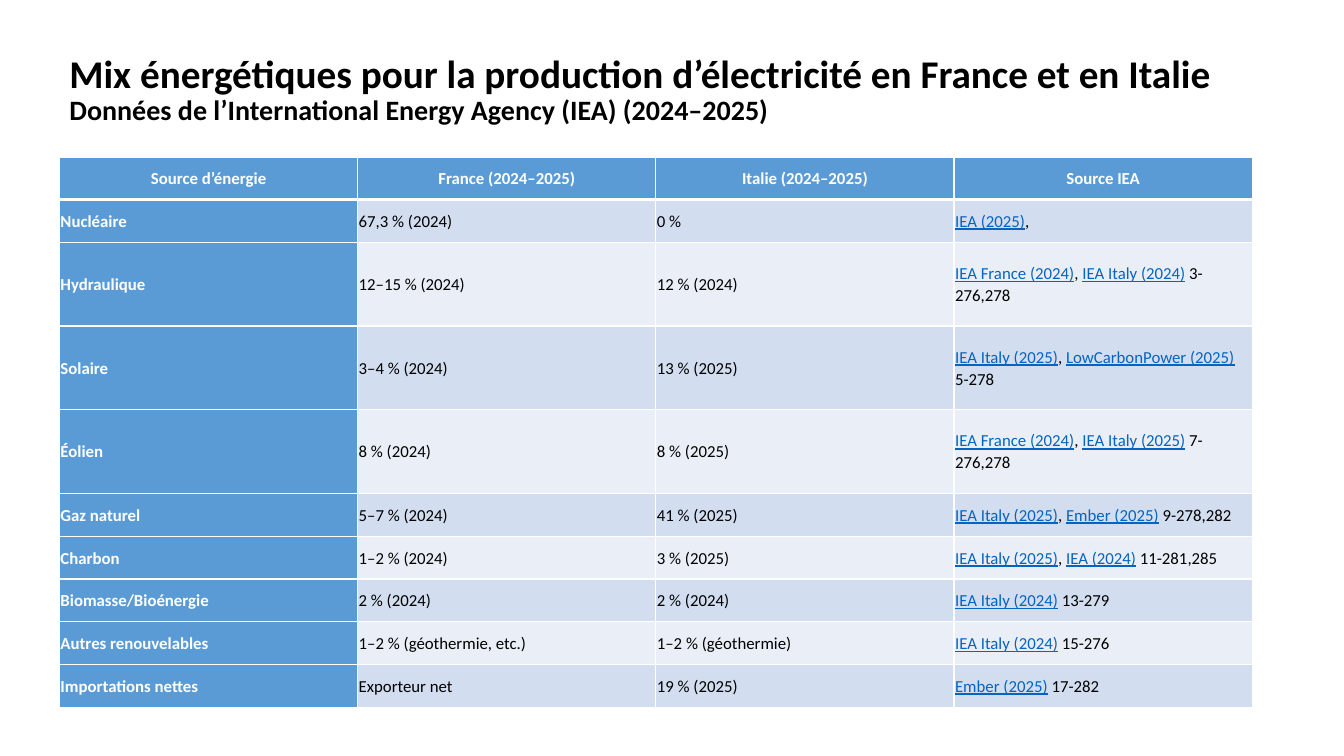
import pptx
import pptx.dml.color
import pptx.enum.text
import pptx.oxml
import pptx.oxml.ns
import pptx.util
from pptx.util import Inches

FONT = "Calibri"
COLOURS = {
    "text": "000000",
    "white": "FFFFFF",
    "link": "0563C1",
    "header": "5B9BD5",
    "dark_band": "D2DEEF",
    "light_band": "EAEFF7",
}
HEADINGS = ["Source d’énergie", "France (2024–2025)", "Italie (2024–2025)", "Source IEA"]
# In the last column, links and plain text alternate, starting with a link.
ENERGY_ROWS = [
    ("Nucléaire", "67,3 % (2024)", "0 %", ["IEA (2025)", ","]),
    ("Hydraulique", "12–15 % (2024)", "12 % (2024)",
     ["IEA France (2024)", ", ", "IEA Italy (2024)", " 3-276,278"]),
    ("Solaire", "3–4 % (2024)", "13 % (2025)",
     ["IEA Italy (2025)", ", ", "LowCarbonPower (2025)", " 5-278"]),
    ("Éolien", "8 % (2024)", "8 % (2025)",
     ["IEA France (2024)", ", ", "IEA Italy (2025)", " 7-276,278"]),
    ("Gaz naturel", "5–7 % (2024)", "41 % (2025)",
     ["IEA Italy (2025)", ", ", "Ember (2025)", " 9-278,282"]),
    ("Charbon", "1–2 % (2024)", "3 % (2025)",
     ["IEA Italy (2025)", ", ", "IEA (2024)", " 11-281,285"]),
    ("Biomasse/Bioénergie", "2 % (2024)", "2 % (2024)", ["IEA Italy (2024)", " 13-279"]),
    ("Autres renouvelables", "1–2 % (géothermie, etc.)", "1–2 % (géothermie)",
     ["IEA Italy (2024)", " 15-276"]),
    ("Importations nettes", "Exporteur net", "19 % (2025)", ["Ember (2025)", " 17-282"]),
]
TALL_ROWS = ("Hydraulique", "Solaire", "Éolien")


def rgb(name):
    return pptx.dml.color.RGBColor.from_string(COLOURS[name])


def set_font(font, size, colour, bold):
    font.name = FONT
    font.size = pptx.util.Pt(size)
    font.bold = bold
    font.color.rgb = rgb(colour)


def add_title(page):
    box = page.shapes.add_textbox(Inches(0.59), Inches(0.4), Inches(11.83), Inches(1))
    frame = box.text_frame
    frame.word_wrap = True
    frame.vertical_anchor = pptx.enum.text.MSO_ANCHOR.MIDDLE
    para = frame.paragraphs[0]
    para.line_spacing = 0.9
    title = para.add_run()
    title.text = "Mix énergétiques pour la production d’électricité en France et en Italie"
    set_font(title.font, 28, "text", True)
    para.add_line_break()
    subtitle = para.add_run()
    subtitle.text = "Données de l’International Energy Agency (IEA) (2024–2025)"
    set_font(subtitle.font, 20, "text", True)


def add_borders(cell, top, bottom):
    """Draw white lines round a cell; top and bottom are widths in points."""
    properties = cell._tc.get_or_add_tcPr()
    for side, width in (("L", 1), ("R", 1), ("T", top), ("B", bottom)):
        properties.append(pptx.oxml.parse_xml(
            f'<a:ln{side} {pptx.oxml.ns.nsdecls("a")} w="{pptx.util.Pt(width)}">'
            f'<a:solidFill><a:srgbClr val="{COLOURS["white"]}"/></a:solidFill>'
            f'</a:ln{side}>'))


def fill_cell(cell, spans, fill, colour="text", bold=False, centred=False,
              top=1, bottom=1):
    """Style a cell and write its text: a string, or a list led by a link."""
    add_borders(cell, top, bottom)
    cell.fill.solid()
    cell.fill.fore_color.rgb = rgb(fill)
    cell.vertical_anchor = pptx.enum.text.MSO_ANCHOR.MIDDLE
    cell.margin_left = cell.margin_right = Inches(0.01)
    cell.margin_top = cell.margin_bottom = Inches(0.01)
    para = cell.text_frame.paragraphs[0]
    align = pptx.enum.text.PP_ALIGN
    para.alignment = align.CENTER if centred else align.LEFT
    para.line_spacing = 1.07
    para.space_after = pptx.util.Pt(8)
    set_font(para.font, 12, colour, bold)
    if isinstance(spans, str):
        para.add_run().text = spans
        return
    for index, text in enumerate(spans):
        span = para.add_run()
        span.text = text
        is_link = index % 2 == 0
        span.font.underline = is_link
        span.font.color.rgb = rgb("link" if is_link else colour)


def add_energy_table(page):
    frame = page.shapes.add_table(len(ENERGY_ROWS) + 1, len(HEADINGS), Inches(0.59),
                                  Inches(1.56), Inches(11.83), Inches(5.44))
    table = frame.table
    table.horz_banding = False
    table.rows[0].height = Inches(0.42)
    for column, heading in enumerate(HEADINGS):
        fill_cell(table.cell(0, column), heading, "header", "white", True,
                  centred=True, bottom=3)
    for row, values in enumerate(ENERGY_ROWS, start=1):
        table.rows[row].height = Inches(0.83 if values[0] in TALL_ROWS else 0.425)
        band = "dark_band" if row % 2 else "light_band"
        top = 3 if row == 1 else 1
        for column, value in enumerate(values):
            cell = table.cell(row, column)
            if column == 0:
                fill_cell(cell, value, "header", "white", True, top=top)
            else:
                fill_cell(cell, value, band, top=top)


def main():
    deck = pptx.Presentation()
    deck.slide_width = Inches(13.33)
    deck.slide_height = Inches(7.5)
    page = deck.slides.add_slide(deck.slide_layouts[6])
    add_title(page)
    add_energy_table(page)
    deck.save("out.pptx")


if __name__ == "__main__":
    main()
